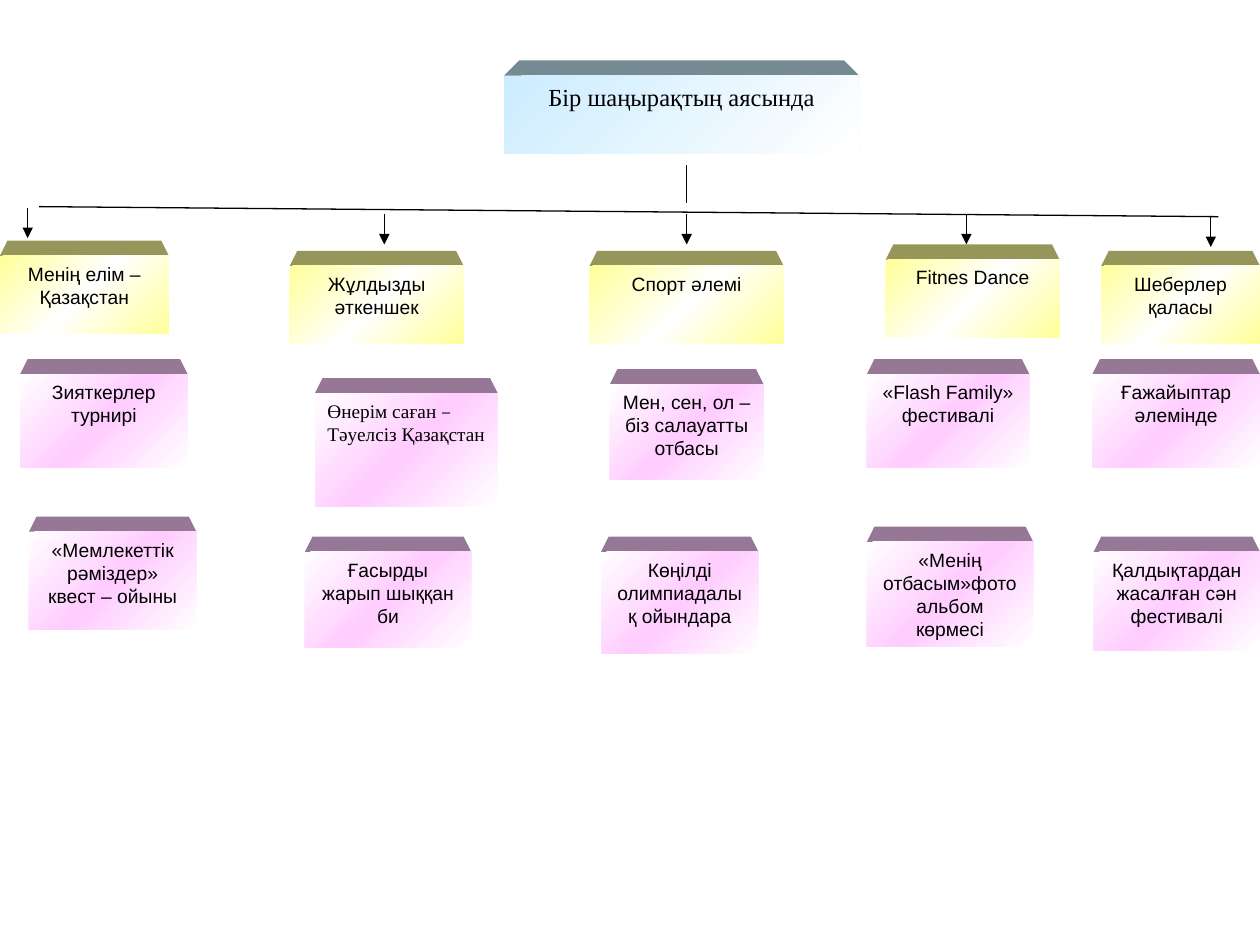
from dataclasses import dataclass
from typing import Optional

from lxml.etree import SubElement
from pptx import Presentation
from pptx.dml.color import RGBColor
from pptx.enum.shapes import MSO_CONNECTOR, MSO_SHAPE
from pptx.enum.text import MSO_ANCHOR, PP_ALIGN
from pptx.oxml import parse_xml
from pptx.oxml.ns import nsdecls, qn
from pptx.util import Inches, Pt


@dataclass(frozen=True)
class Style:
    """Colours of a block: its gradient and its bevelled top."""
    stops: tuple[str, ...]
    top: str
    inset: float = 0.06


@dataclass(frozen=True)
class Block:
    """One labelled block of the chart."""
    left: float
    y: float
    width: float
    height: float
    text: str
    style: Style
    size: float = 11
    font: str = "Arial"
    dash: Optional[str] = None
    align: PP_ALIGN = PP_ALIGN.CENTER


@dataclass(frozen=True)
class Line:
    """A straight line, with or without an arrowhead."""
    x1: float
    y1: float
    x2: float
    y2: float
    arrow: bool = False


DEPTH = 0.12
SERIF = "Times New Roman"
BLUE = Style(("CCECFF", "FFFFFF"), "768A94", 0.12)
GOLD = Style(("FFFF99", "FFFFFF", "FFFF99"), "96965A")
PINK = Style(("FFFFFF", "FFCCFF", "FFFFFF"), "967896")

BLOCKS = [
    Block(4, 0.6, 2.82, 0.62, "Бір шаңырақтың аясында", BLUE, 14, SERIF),
    Block(0, 2.03, 1.34, 0.62, "Менің елім – Қазақстан", GOLD),
    Block(2.3, 2.11, 1.38, 0.62, "Жұлдызды әткеншек", GOLD),
    Block(4.68, 2.11, 1.54, 0.62, "Спорт әлемі", GOLD),
    Block(7.03, 2.06, 1.38, 0.62, "Fitnes Dance", GOLD),
    Block(8.74, 2.11, 1.26, 0.62, "Шеберлер қаласы", GOLD),
    Block(0.16, 2.97, 1.33, 0.74, "Зияткерлер турнирі", PINK),
    Block(0.23, 4.22, 1.33, 0.78, "«Мемлекеттік рәміздер» квест – ойыны", PINK),
    Block(2.42, 4.38, 1.32, 0.76, "Ғасырды жарып шыққан би", PINK),
    Block(2.5, 3.12, 1.45, 0.9, "Өнерім саған – Тәуелсіз Қазақстан", PINK,
          font=SERIF, dash="Cambria", align=PP_ALIGN.LEFT),
    Block(4.84, 3.05, 1.22, 0.76, "Мен, сен, ол – біз салауатты отбасы", PINK),
    Block(4.77, 4.38, 1.25, 0.81, "Көңілді олимпиадалық ойындара", PINK),
    Block(6.88, 2.97, 1.29, 0.74, "«Flash Family» фестивалі", PINK),
    Block(8.67, 2.97, 1.33, 0.74, "Ғажайыптар әлемінде", PINK),
    Block(6.88, 4.3, 1.32, 0.83, "«Менің отбасым»фотоальбом\nкөрмесі", PINK),
    Block(8.68, 4.38, 1.32, 0.78, "Қалдықтардан жасалған сән фестивалі", PINK),
]

DROPS = [(0.22, 1.65), (3.05, 1.7), (5.45, 1.7), (7.67, 1.7), (9.61, 1.72)]
LINES = [Line(x, y, x, y + 0.24, True) for x, y in DROPS] + [
    Line(0.31, 1.64, 9.67, 1.72),
    Line(5.45, 1.31, 5.45, 1.61),
]


def tint(code: str) -> RGBColor:
    """Turn a hex string into a colour."""
    return RGBColor.from_string(code)


def write(shape, text: str, *, size: float, font: str, align: PP_ALIGN,
          dash: Optional[str] = None, color: str = "000000") -> None:
    """Put text in a shape; dash names another font for the dashes."""
    frame = shape.text_frame
    frame.word_wrap = True
    frame.vertical_anchor = MSO_ANCHOR.TOP
    for i, row in enumerate(text.split("\n")):
        para = frame.paragraphs[0] if i == 0 else frame.add_paragraph()
        para.alignment = align
        for part in row.partition("–") if dash else (row,):
            run = para.add_run()
            run.text = part
            run.font.size = Pt(size)
            run.font.name = dash if part == "–" else font
            run.font.color.rgb = tint(color)


def shade(shape, codes: tuple[str, ...]) -> None:
    """Fill a shape with an even diagonal gradient."""
    shape.fill.gradient()
    shape.fill.gradient_angle = 315
    stops = shape._element.spPr.find(".//" + qn("a:gsLst"))
    for old in list(stops):
        stops.remove(old)
    for i, code in enumerate(codes):
        pos = 100000 * i // (len(codes) - 1)
        stops.append(parse_xml(
            f'<a:gs {nsdecls("a")} pos="{pos}"><a:srgbClr val="{tint(code)}"/></a:gs>'))


def plain(shape) -> None:
    """Take off the outline and the shadow."""
    shape.line.fill.background()
    shape.shadow.inherit = False


def draw_block(shapes, block: Block) -> None:
    """Draw a block with its bevelled top and its label."""
    style, left, y = block.style, block.left, block.y
    right = left + block.width
    outline = shapes.build_freeform(Inches(left), Inches(y))
    outline.add_line_segments([
        (Inches(left + style.inset), Inches(y - DEPTH)),
        (Inches(right - style.inset), Inches(y - DEPTH)),
        (Inches(right), Inches(y)),
    ], close=True)
    top = outline.convert_to_shape()
    top.fill.solid()
    top.fill.fore_color.rgb = tint(style.top)
    plain(top)
    face = shapes.add_shape(MSO_SHAPE.RECTANGLE, Inches(left), Inches(y),
                            Inches(block.width), Inches(block.height))
    shade(face, style.stops)
    plain(face)
    write(face, block.text, size=block.size, font=block.font,
          align=block.align, dash=block.dash)


def draw_line(shapes, line: Line) -> None:
    """Draw a thin black line."""
    link = shapes.add_connector(MSO_CONNECTOR.STRAIGHT, Inches(line.x1),
                                Inches(line.y1), Inches(line.x2), Inches(line.y2))
    link.line.color.rgb = tint("000000")
    link.line.width = Pt(0.75)
    if line.arrow:
        SubElement(link.line._get_or_add_ln(), qn("a:tailEnd"), type="triangle")
    SubElement(link._element.spPr, qn("a:effectLst"))


def main() -> None:
    """Build the slide and save it."""
    deck = Presentation()
    deck.slide_width, deck.slide_height = Inches(10), Inches(7.5)
    shapes = deck.slides.add_slide(deck.slide_layouts[6]).shapes
    for line in LINES:
        draw_line(shapes, line)
    for block in BLOCKS:
        draw_block(shapes, block)
    deck.save("out.pptx")


if __name__ == "__main__":
    main()
